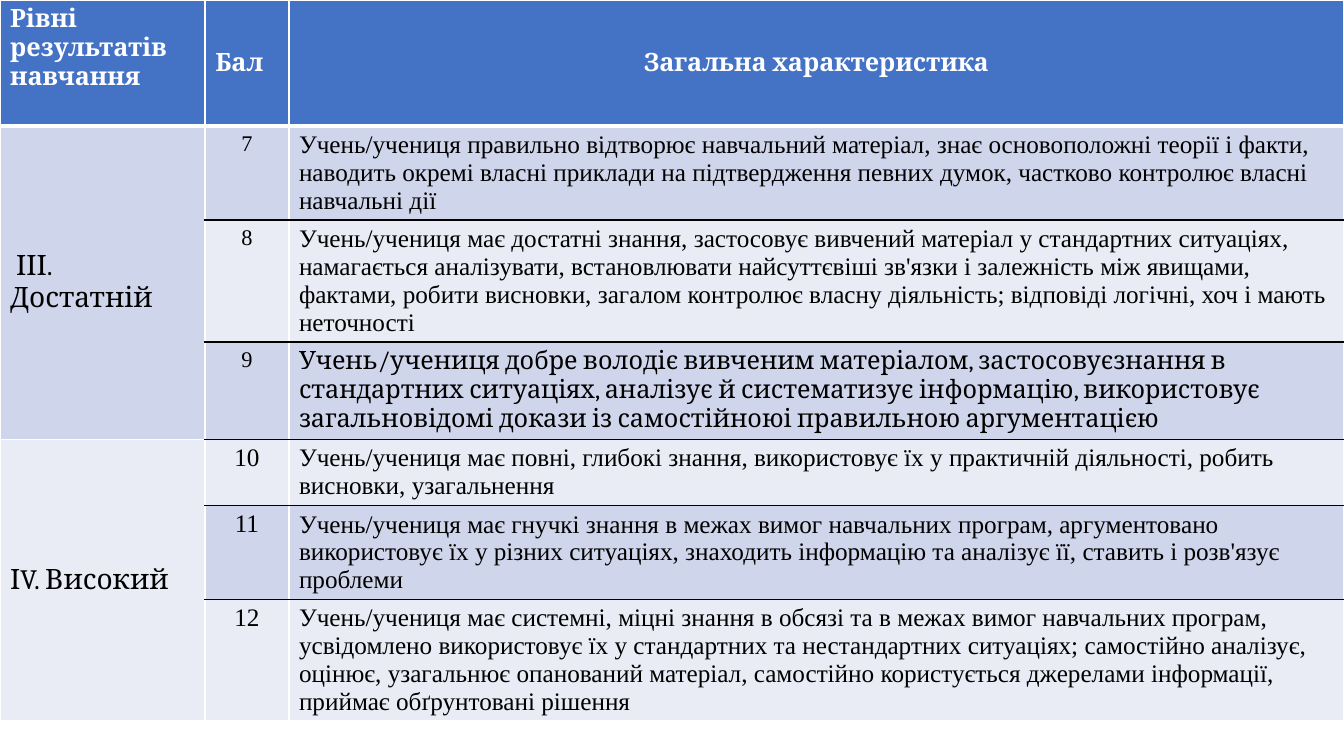
from lxml import etree
from pptx import Presentation
from pptx.dml.color import RGBColor
from pptx.enum.text import MSO_ANCHOR, PP_ALIGN
from pptx.oxml.ns import qn
from pptx.util import Emu, Pt

TOP, MIDDLE = MSO_ANCHOR.TOP, MSO_ANCHOR.MIDDLE
LEFT, CENTER = PP_ALIGN.LEFT, PP_ALIGN.CENTER
PX = 914400 / 100.8
SERIF, TIMES = "Cambria", "Times New Roman"
WHITE, BLACK, HEADER_BLUE = "FFFFFF", "000000", "4472C4"
BAND_FILLS = ["E9EBF5", "CFD5EA"]

COLUMN_WIDTHS = [205, 84, 1055]
ROW_HEIGHTS = [126, 94, 122, 97, 66, 94, 121]
LEVEL_SPAN = 3

HEADERS = [
    ("Рівні результатів навчання", LEFT, TOP),
    ("Бал", LEFT, MIDDLE),
    ("Загальна характеристика", CENTER, MIDDLE),
]
LEVELS = [" ІІІ. Достатній", "ІV. Високий"]
# score, score size, description, description font
GRADES = [
    ("7", 16, "Учень/учениця правильно відтворює навчальний матеріал, знає основоположні теорії і факти, "
     "наводить окремі власні приклади на підтвердження певних думок, частково контролює власні "
     "навчальні дії", TIMES),
    ("8", 16, "Учень/учениця має достатні знання, застосовує вивчений матеріал у стандартних ситуаціях, "
     "намагається аналізувати, встановлювати найсуттєвіші зв'язки і залежність між явищами,\v"
     "фактами, робити висновки, загалом контролює власну діяльність; відповіді логічні, хоч і мають "
     "неточності", TIMES),
    ("9", 16, "Учень/учениця добре володіє вивченим матеріалом, застосовуєзнання в стандартних ситуаціях, "
     "аналізує й систематизує інформацію, використовує загальновідомі докази із самостійноюі "
     "правильною аргументацією", SERIF),
    ("10", 18, "Учень/учениця має повні, глибокі знання, використовує їх у практичній діяльності, робить "
     "висновки, узагальнення", TIMES),
    ("11", 18, "Учень/учениця має гнучкі знання в межах вимог навчальних програм, аргументовано "
     "використовує їх у різних ситуаціях, знаходить інформацію та аналізує її, ставить і розв'язує "
     "проблеми", TIMES),
    ("12", 18, "Учень/учениця має системні, міцні знання в обсязі та в межах вимог навчальних програм, "
     "усвідомлено використовує їх у стандартних та нестандартних ситуаціях; самостійно аналізує, "
     "оцінює, узагальнює опанований матеріал, самостійно користується джерелами інформації, "
     "приймає обґрунтовані рішення", TIMES),
]


def write_cell(cell, text, size, font_name, color=BLACK, bold=False, align=LEFT, anchor=MIDDLE):
    """Fill the cell with text; a vertical tab in it becomes a line break."""
    cell.vertical_anchor = anchor
    paragraph = cell.text_frame.paragraphs[0]
    paragraph.alignment = align
    for index, line in enumerate(text.split("\v")):
        if index:
            paragraph.add_line_break()
        run = paragraph.add_run()
        run.text = line
        run.font.size = Pt(size)
        run.font.name = font_name
        run.font.bold = bold
        run.font.color.rgb = RGBColor.from_string(color)


def style_cell(cell, fill, top, bottom):
    """Set the fill and borders; top and bottom are (colour, points), the sides are thin white."""
    properties = cell._tc.get_or_add_tcPr()
    side = (WHITE, 1)
    for tag, (color, points) in zip(("a:lnL", "a:lnR", "a:lnT", "a:lnB"), (side, side, top, bottom)):
        line = etree.SubElement(properties, qn(tag), w=str(Pt(points)))
        solid = etree.SubElement(line, qn("a:solidFill"))
        etree.SubElement(solid, qn("a:srgbClr"), val=color)
    cell.fill.solid()
    cell.fill.fore_color.rgb = RGBColor.from_string(fill)


presentation = Presentation()
presentation.slide_width = Emu(round(1344 * PX))
presentation.slide_height = Emu(round(756 * PX))
slide = presentation.slides.add_slide(presentation.slide_layouts[6])

table = slide.shapes.add_table(
    len(ROW_HEIGHTS), len(COLUMN_WIDTHS), 0, 0,
    Emu(round(sum(COLUMN_WIDTHS) * PX)), Emu(round(sum(ROW_HEIGHTS) * PX)),
).table
for column, width in zip(table.columns, COLUMN_WIDTHS):
    column.width = Emu(round(width * PX))
for row, height in zip(table.rows, ROW_HEIGHTS):
    row.height = Emu(round(height * PX))

for column_index, (text, align, anchor) in enumerate(HEADERS):
    cell = table.cell(0, column_index)
    style_cell(cell, HEADER_BLUE, (WHITE, 1), (WHITE, 3))
    write_cell(cell, text, 18, SERIF, WHITE, True, align, anchor)

for row_index, (score, score_size, description, font_name) in enumerate(GRADES, start=1):
    fill = BAND_FILLS[row_index % 2]
    top = (WHITE if row_index == 1 else BLACK, 1)
    bottom = (WHITE if row_index == len(GRADES) else BLACK, 1)
    level_cell, score_cell, description_cell = table.rows[row_index].cells
    style_cell(level_cell, fill, (WHITE, 1), (WHITE, 1))
    style_cell(score_cell, fill, top, bottom)
    style_cell(description_cell, fill, top, bottom)
    write_cell(score_cell, score, score_size, TIMES, align=CENTER, anchor=TOP)
    write_cell(description_cell, description, 18, font_name)

for level_index, level in enumerate(LEVELS):
    first_row = 1 + level_index * LEVEL_SPAN
    level_cell = table.cell(first_row, 0)
    level_cell.merge(table.cell(first_row + LEVEL_SPAN - 1, 0))
    write_cell(level_cell, level, 20, SERIF)

presentation.save("out.pptx")
